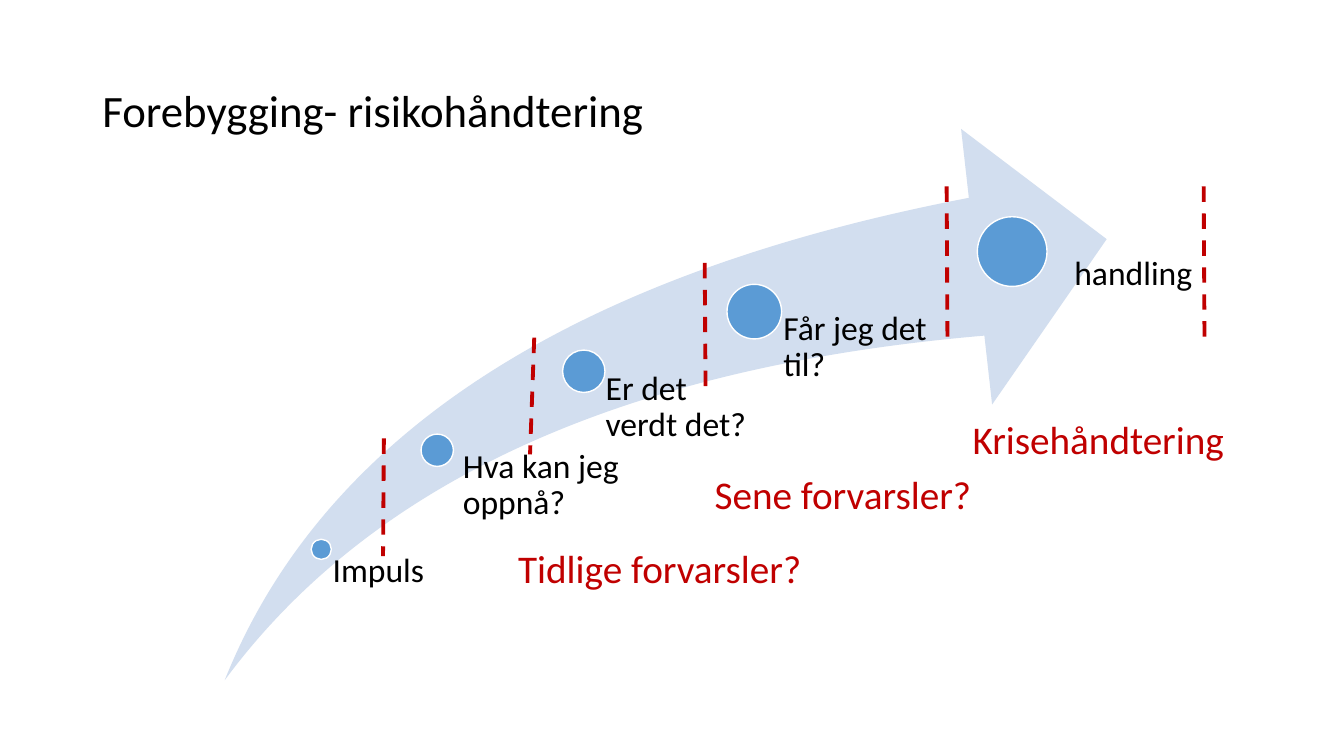
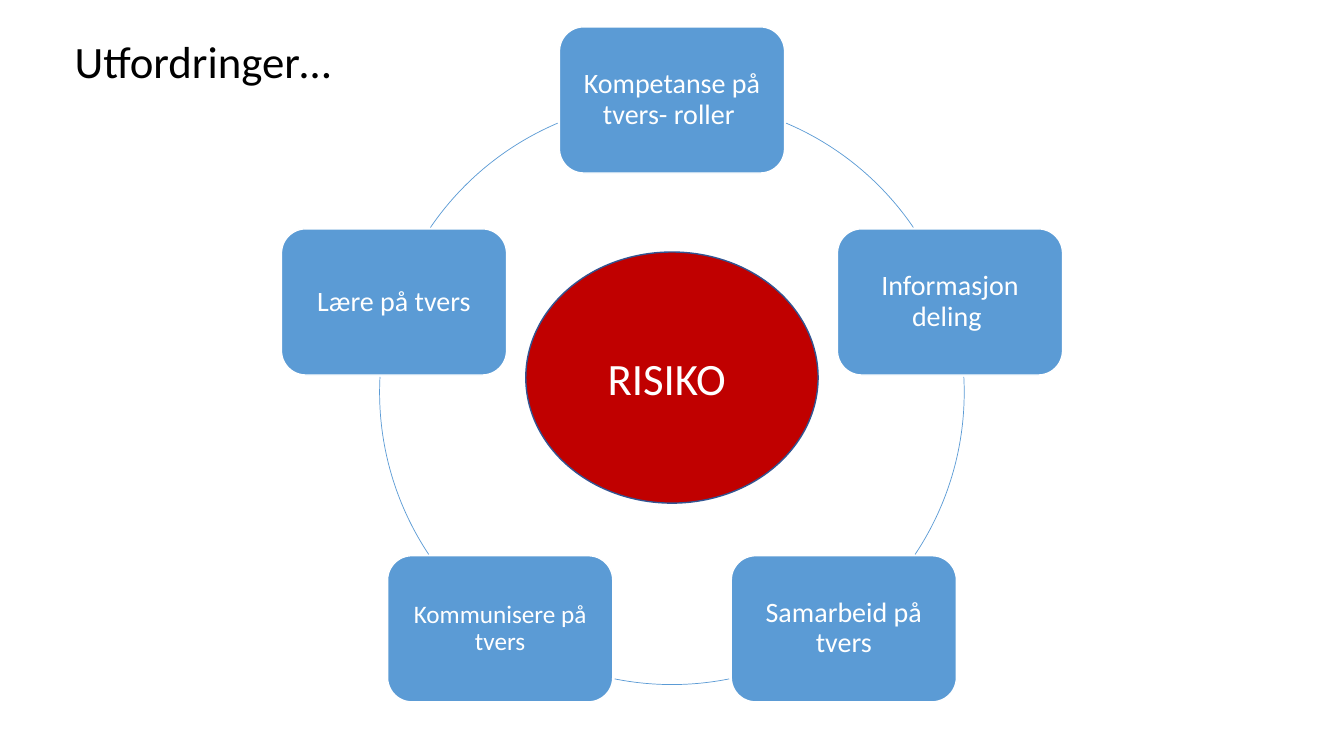
"""Build two slides on risk prevention: a warning-sign arrow and a ring of challenges."""
import math

import lxml.etree
import pptx
import pptx.dml.color
import pptx.enum.dml
import pptx.enum.shapes
import pptx.enum.text
import pptx.oxml.ns
import pptx.util

BLACK = pptx.dml.color.RGBColor(0x00, 0x00, 0x00)
WHITE = pptx.dml.color.RGBColor(0xFF, 0xFF, 0xFF)
RED = pptx.dml.color.RGBColor(0xC0, 0x00, 0x00)
BLUE = pptx.dml.color.RGBColor(0x5B, 0x9B, 0xD5)
PALE_BLUE = pptx.dml.color.RGBColor(0xD2, 0xDE, 0xEF)
DARK_BLUE = pptx.dml.color.RGBColor(0x32, 0x54, 0x91)
FONT = "Calibri"
COLUMNS, ROWS = 160, 90
CELL = pptx.util.Inches(7.5) / ROWS
PRESET = pptx.enum.shapes.MSO_SHAPE
ALIGN = pptx.enum.text.PP_ALIGN
ANCHOR = pptx.enum.text.MSO_ANCHOR


def draw(slide, preset, area, fill=None, line=None, weight=1):
    shape = slide.shapes.add_shape(preset, *[round(n * CELL) for n in area])
    shape.shadow.inherit = False
    if fill is None:
        shape.fill.background()
    else:
        shape.fill.solid()
        shape.fill.fore_color.rgb = fill
    if line is None:
        shape.line.fill.background()
    else:
        shape.line.color.rgb = line
        shape.line.width = pptx.util.Pt(weight)
    return shape


def write(shape, text, size, color, align=ALIGN.LEFT, anchor=ANCHOR.TOP,
          spacing=0.9, margins=(0.1, 0.05), wrap=True):
    frame = shape.text_frame
    frame.word_wrap = wrap
    frame.vertical_anchor = anchor
    frame.margin_left = frame.margin_right = pptx.util.Inches(margins[0])
    frame.margin_top = frame.margin_bottom = pptx.util.Inches(margins[1])
    paragraph = frame.paragraphs[0]
    paragraph.alignment = align
    paragraph.line_spacing = spacing
    run = paragraph.add_run()
    run.text = text
    run.font.name = FONT
    run.font.size = pptx.util.Pt(size)
    run.font.color.rgb = color


deck = pptx.Presentation()
deck.slide_width = round(COLUMNS * CELL)
deck.slide_height = round(ROWS * CELL)

titles = [
    ("Forebygging- risikohåndtering", (11, 4.8, 138, 17.4)),
    ("Utfordringer…", (7.7, 2, 61.2, 11.2)),
]
slides = []
for title, area in titles:
    slide = deck.slides.add_slide(deck.slide_layouts[6])
    heading = slide.shapes.add_textbox(*[round(n * CELL) for n in area])
    write(heading, title, 32, BLACK, anchor=ANCHOR.MIDDLE)
    slides.append(slide)
prevention, challenges = slides

swoosh = draw(prevention, PRESET.SWOOSH_ARROW, (26.75, 15.35, 105, 65.63), PALE_BLUE)
swoosh.adjustments[0] = swoosh.adjustments[1] = 0.25

stages = [
    ("Impuls", (38.25, 65.4, 2.4), (39.6, 65.9, 12.5)),
    ("Hva kan jeg oppnå?", (52.05, 53.6, 3.85), (55.1, 53.5, 20.4)),
    ("Er det verdt det?", (69.5, 44.2, 5.05), (72.1, 44.2, 17.6)),
    ("Får jeg det til?", (89.8, 37.1, 6.5), (93.25, 37.1, 17.5)),
    ("handling", (120.5, 29.95, 8.3), (127.9, 30.5, 16.6)),
]
for stage, (center_x, center_y, diameter), label_place in stages:
    corner = (center_x - diameter / 2, center_y - diameter / 2)
    draw(prevention, PRESET.OVAL, (*corner, diameter, diameter), BLUE, WHITE)
    label = prevention.shapes.add_textbox(*[round(n * CELL) for n in (*label_place, 9)])
    write(label, stage, 24, BLACK, margins=(0, 0))

thresholds = [
    (45.7, 52.2, 45.6, 66.2),
    (63.6, 40.2, 63.1, 54.1),
    (83.9, 31.3, 84, 47.2),
    (112.7, 22.2, 112.8, 41.3),
    (143.3, 22.2, 143.4, 41.3),
]
for ends in thresholds:
    threshold = prevention.shapes.add_connector(
        pptx.enum.shapes.MSO_CONNECTOR.STRAIGHT, *[round(n * CELL) for n in ends])
    threshold.line.color.rgb = RED
    threshold.line.width = pptx.util.Pt(2.75)
    threshold.line.dash_style = pptx.enum.dml.MSO_LINE.DASH
    lxml.etree.SubElement(threshold.element.spPr, pptx.oxml.ns.qn("a:effectLst"))

warnings = [
    ("Tidlige forvarsler?", (60.5, 64.2, 37.6, 6.8)),
    ("Sene forvarsler?", (83.9, 55.4, 34.3, 6.8)),
    ("Krisehåndtering", (114.6, 48.8, 33.7, 6.8)),
]
for warning, area in warnings:
    caption = prevention.shapes.add_textbox(*[round(n * CELL) for n in area])
    write(caption, warning, 28, RED, spacing=1, wrap=False)

RING_X, RING_Y, RADIUS = COLUMNS / 2, 46.7, 34.8
NODE_WIDTH, NODE_HEIGHT = 26.8, 17.4
topics = [
    ("Kompetanse på tvers- roller ", 20, (293, 325.7)),
    ("Informasjon deling ", 20, (357, 33.7)),
    ("Samarbeid på tvers", 20, (78.7, 101.3)),
    ("Kommunisere på tvers", 18, (146.3, 183)),
    ("Lære på tvers", 20, (214.3, 247)),
]
for index, (topic, size, sweep) in enumerate(topics):
    angle = math.radians(index * 360 / len(topics) - 90)
    left = RING_X + RADIUS * math.cos(angle) - NODE_WIDTH / 2
    top = RING_Y + RADIUS * math.sin(angle) - NODE_HEIGHT / 2
    node = draw(challenges, PRESET.ROUNDED_RECTANGLE,
                (left, top, NODE_WIDTH, NODE_HEIGHT), BLUE, WHITE)
    write(node, topic, size, WHITE, ALIGN.CENTER, ANCHOR.MIDDLE, margins=(0.08, 0.08))
    link = draw(challenges, PRESET.ARC,
                (RING_X - RADIUS, RING_Y - RADIUS, 2 * RADIUS, 2 * RADIUS),
                line=BLUE, weight=0.5)
    for end, degrees in enumerate(sweep):
        link.adjustments[end] = degrees * 0.6

risk = draw(challenges, PRESET.OVAL, (62.6, 30, 34.8, 29.9), RED, DARK_BLUE)
write(risk, "RISIKO ", 32, WHITE, ALIGN.CENTER, ANCHOR.MIDDLE, spacing=1)

deck.save("out.pptx")
